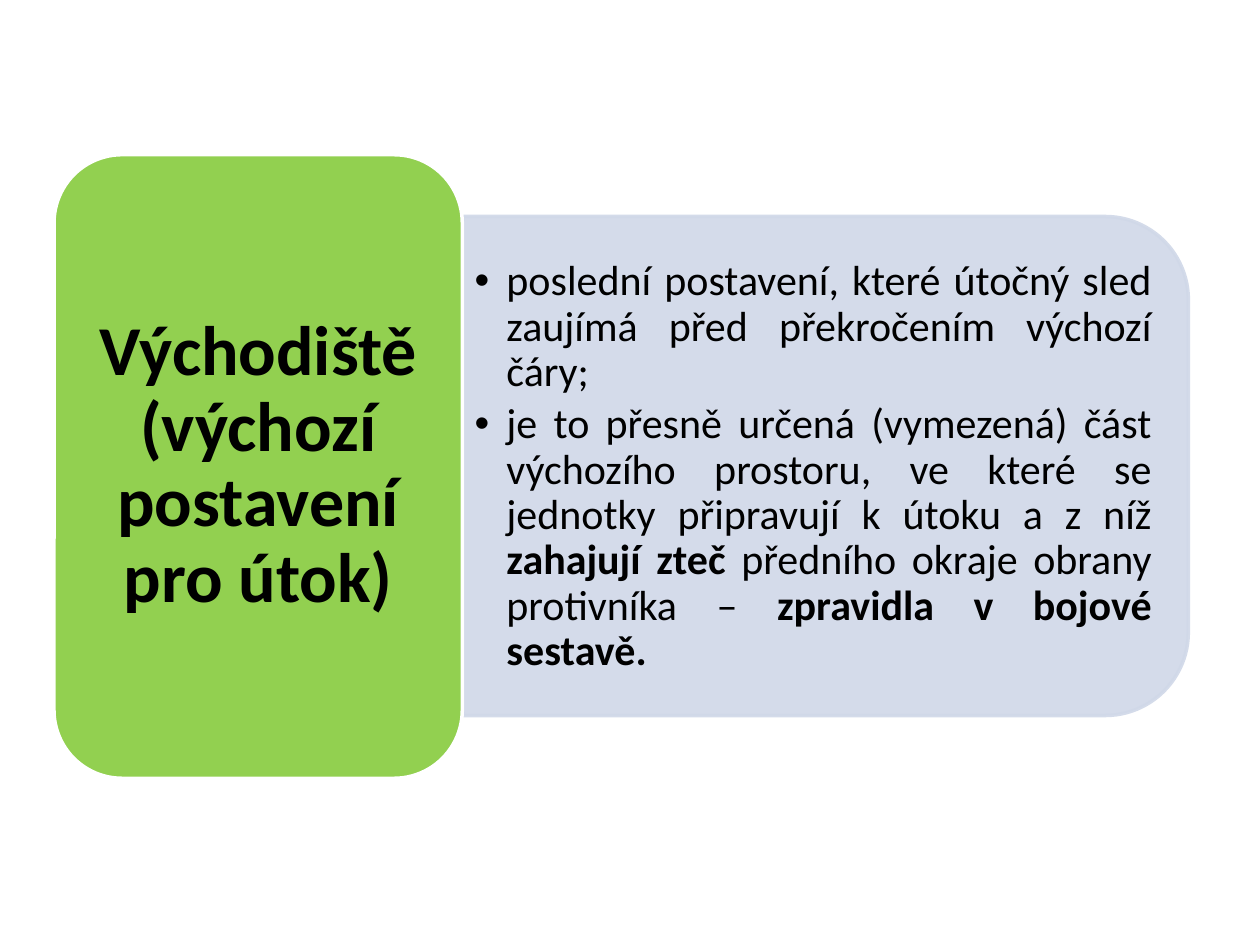
from lxml import etree
from pptx import Presentation
from pptx.dml.color import RGBColor
from pptx.enum.shapes import MSO_SHAPE
from pptx.enum.text import MSO_ANCHOR, PP_ALIGN
from pptx.oxml.ns import qn
from pptx.util import Cm, Pt

ROUND_RECT = MSO_SHAPE.ROUNDED_RECTANGLE
ROUND_TOP = MSO_SHAPE.ROUND_2_SAME_RECTANGLE
MIDDLE = MSO_ANCHOR.MIDDLE
CENTER, JUSTIFY = PP_ALIGN.CENTER, PP_ALIGN.JUSTIFY

COLORS = {"label": "92D050", "panel": "D0D8E8", "edge": "FFFFFF", "text": "000000"}
LABEL = [("Východiště (výchozí postavení pro útok)", True)]
POINTS = [
    [("poslední postavení, které útočný sled zaujímá před překročením výchozí čáry;", False)],
    [
        ("je to přesně určená (vymezená) část výchozího prostoru, ve které se "
         "jednotky připravují k útoku a z níž ", False),
        ("zahajují zteč", True),
        (" předního okraje obrany protivníka – ", False),
        ("zpravidla v bojové sestavě.", True),
    ],
]
LABEL_FORMAT = {"alignment": CENTER, "line_spacing": 0.9, "space_after": Pt(14)}
POINT_FORMAT = {"alignment": JUSTIFY, "line_spacing": 0.9, "space_after": Pt(4), "level": 1}
LABEL_FRAME = {
    "word_wrap": True, "vertical_anchor": MIDDLE,
    "margin_left": Cm(0.42), "margin_right": Cm(0.42),
    "margin_top": Cm(0.21), "margin_bottom": Cm(0.21),
}
POINT_FRAME = {"word_wrap": True, "vertical_anchor": MIDDLE}


def set_values(target, values):
    """Set each named attribute of the target."""
    for name, value in values.items():
        setattr(target, name, value)


def color(name):
    """Return the named colour."""
    return RGBColor.from_string(COLORS[name])


def add_block(page, kind, place, fill, edge):
    """Add a filled, outlined shape at a place given in centimetres."""
    block = page.shapes.add_shape(kind, *map(Cm, place))
    block.shadow.inherit = False
    block.fill.solid()
    block.fill.fore_color.rgb = color(fill)
    block.line.color.rgb = color(edge)
    block.line.width = Pt(2)
    return block


def set_opacity(block, percent):
    """Make the fill and line of a block partly transparent."""
    for tone in block._element.spPr.iter(qn("a:srgbClr")):
        etree.SubElement(tone, qn("a:alpha"), val=str(percent * 1000))


def write_spans(para, spans, size, values):
    """Fill a paragraph with normal and bold spans."""
    set_values(para, values)
    for text, bold in spans:
        span = para.add_run()
        span.text = text
        set_values(span.font, {"name": "Calibri", "size": Pt(size), "bold": bold})
        span.font.color.rgb = color("text")


def add_bullet(para):
    """Give a paragraph a bullet with a hanging indent."""
    properties = para._p.get_or_add_pPr()
    indent = Cm(0.64)
    properties.set("marL", str(indent))
    properties.set("indent", str(-indent))
    etree.SubElement(properties, qn("a:buFont"), typeface="Arial")
    etree.SubElement(properties, qn("a:buChar"), char="•")


def add_points(page, place, points):
    """Add a text box with a bulleted list."""
    frame = page.shapes.add_textbox(*map(Cm, place)).text_frame
    set_values(frame, POINT_FRAME)
    for index, spans in enumerate(points):
        para = frame.add_paragraph() if index else frame.paragraphs[0]
        write_spans(para, spans, 24, POINT_FORMAT)
        add_bullet(para)


def main():
    """Build the slide and save the deck."""
    deck = Presentation()
    deck.slide_width, deck.slide_height = Cm(25.4), Cm(19.05)
    page = deck.slides.add_slide(deck.slide_layouts[6])

    panel = add_block(page, ROUND_TOP, (11.61, 2.08, 10.06, 14.63), "panel", "panel")
    panel.rotation = 90
    set_opacity(panel, 90)
    add_points(page, (9.32, 4.88, 14.15, 9.07), POINTS)

    label = add_block(page, ROUND_RECT, (1.09, 3.12, 8.23, 12.57), "label", "edge")
    set_values(label.text_frame, LABEL_FRAME)
    write_spans(label.text_frame.paragraphs[0], LABEL, 40, LABEL_FORMAT)

    deck.save("out.pptx")


if __name__ == "__main__":
    main()
